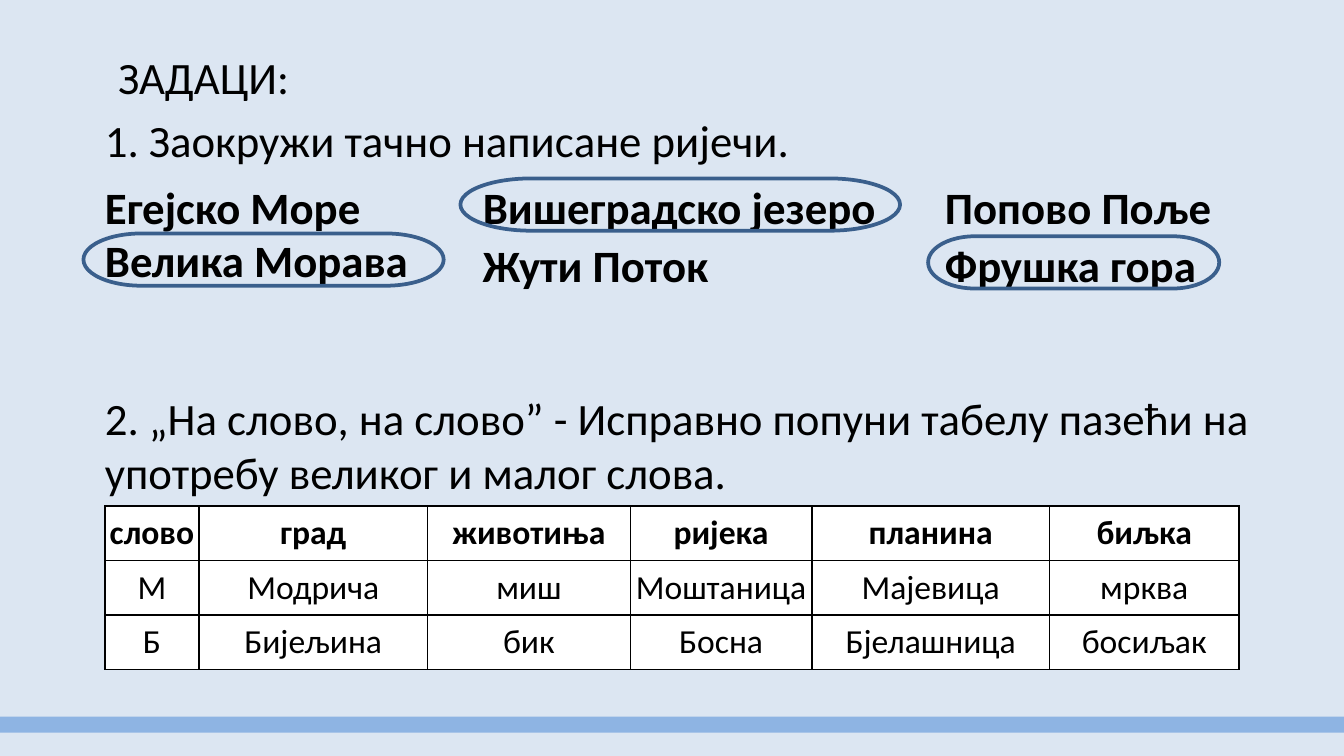
import dataclasses

import lxml.etree
import pptx
import pptx.dml.color
import pptx.enum.shapes
import pptx.enum.text
import pptx.oxml.ns
import pptx.util

Pt = pptx.util.Pt
RGB = pptx.dml.color.RGBColor.from_string
Anchor = pptx.enum.text.MSO_ANCHOR
Shape = pptx.enum.shapes.MSO_SHAPE


@dataclasses.dataclass(frozen=True)
class Theme:
    """Colours, font and type sizes of the slide."""

    background: str = "DCE6F2"
    stripe: str = "8EB4E3"
    ring: str = "3A5F8C"
    ink: str = "000000"
    cell: str = "FFFFFF"
    font: str = "Calibri"
    body: float = 24
    table: float = 18
    ring_width: float = 2
    border: float = 1


THEME = Theme()

WORD_COLUMNS = [
    (0, 173, 60.5, [("Егејско Море", 31), ("Велика Морава", None)]),
    (202.5, 218, 62.5, [("Вишеградско језеро", 31), ("Жути Поток", 31)]),
    (450, 173, 62.5, [("Попово Поље", 31), ("Фрушка гора", 31)]),
]
RINGS = [(-11.5, 31.5, 193), (190.5, 2, 235.5), (441, 33, 156)]
RING_HEIGHT = 28

COLUMN_WIDTHS = [50.4, 122.4, 108.7, 97.2, 127.4, 101.5]
WORD_GRID = [
    ["слово", "град", "животиња", "ријека", "планина", "биљка"],
    ["М", "Модрича", "миш", "Моштаница", "Мајевица", "мрква"],
    ["Б", "Бијељина", "бик", "Босна", "Бјелашница", "босиљак"],
]


def write(paragraph, words, size, bold=False):
    """Add one styled run to a paragraph."""
    run = paragraph.add_run()
    run.text = words
    run.font.name = THEME.font
    run.font.size = Pt(size)
    run.font.bold = bold
    run.font.color.rgb = RGB(THEME.ink)


def add_lines(slide, box, lines, bold=False):
    """Place lines of body text, each with its line spacing, in a box without insets."""
    frame = slide.shapes.add_textbox(*map(Pt, box)).text_frame
    frame.word_wrap = True
    frame.auto_size = pptx.enum.text.MSO_AUTO_SIZE.SHAPE_TO_FIT_TEXT
    frame.vertical_anchor = Anchor.MIDDLE
    frame.margin_left = frame.margin_right = frame.margin_top = frame.margin_bottom = 0
    for index, (words, spacing) in enumerate(lines):
        paragraph = frame.add_paragraph() if index else frame.paragraphs[0]
        if spacing:
            paragraph.line_spacing = Pt(spacing)
        write(paragraph, words, THEME.body, bold)


def add_heading(slide, box):
    """Place the unwrapped heading."""
    frame = slide.shapes.add_textbox(*map(Pt, box)).text_frame
    frame.word_wrap = False
    frame.auto_size = pptx.enum.text.MSO_AUTO_SIZE.SHAPE_TO_FIT_TEXT
    write(frame.paragraphs[0], "ЗАДАЦИ:", THEME.body)


def add_stripe(slide, box):
    """Place the coloured stripe near the foot."""
    stripe = slide.shapes.add_shape(Shape.RECTANGLE, *map(Pt, box))
    stripe.shadow.inherit = False
    stripe.fill.solid()
    stripe.fill.fore_color.rgb = RGB(THEME.stripe)
    stripe.line.fill.background()


def add_word_choice(slide, box):
    """Place the word columns and the rings round the right answers."""
    left, top = box[:2]
    for x, width, height, lines in WORD_COLUMNS:
        add_lines(slide, (left + x, top, width, height), lines, bold=True)
    for x, y, width in RINGS:
        ring = slide.shapes.add_shape(
            Shape.FLOWCHART_TERMINATOR, Pt(left + x), Pt(top + y), Pt(width), Pt(RING_HEIGHT)
        )
        ring.shadow.inherit = False
        ring.fill.background()
        ring.line.color.rgb = RGB(THEME.ring)
        ring.line.width = Pt(THEME.ring_width)


def style_cell(cell):
    """Give a cell thin borders, a plain fill and no margins."""
    qn = pptx.oxml.ns.qn
    properties = cell._tc.get_or_add_tcPr()
    for side in ("lnL", "lnR", "lnT", "lnB"):
        border = lxml.etree.SubElement(properties, qn(f"a:{side}"), w=str(Pt(THEME.border)))
        fill = lxml.etree.SubElement(border, qn("a:solidFill"))
        lxml.etree.SubElement(fill, qn("a:srgbClr"), val=THEME.ink)
    cell.fill.solid()
    cell.fill.fore_color.rgb = RGB(THEME.cell)
    cell.margin_left = cell.margin_right = cell.margin_top = cell.margin_bottom = 0
    cell.vertical_anchor = Anchor.MIDDLE


def add_word_table(slide, box):
    """Place the filled-in word game table."""
    table = slide.shapes.add_table(len(WORD_GRID), len(COLUMN_WIDTHS), *map(Pt, box)).table
    table.first_row = table.horz_banding = False
    for column, width in zip(table.columns, COLUMN_WIDTHS):
        column.width = Pt(width)
    for row_index, row in enumerate(WORD_GRID):
        table.rows[row_index].height = Pt(box[3] / len(WORD_GRID))
        for column_index, word in enumerate(row):
            cell = table.cell(row_index, column_index)
            style_cell(cell)
            paragraph = cell.text_frame.paragraphs[0]
            paragraph.alignment = pptx.enum.text.PP_ALIGN.CENTER
            write(paragraph, word, THEME.table, bold=row_index == 0)


def build_tasks_slide(deck):
    """Build the slide with the two tasks."""
    slide = deck.slides.add_slide(deck.slide_layouts[6])
    slide.background.fill.solid()
    slide.background.fill.fore_color.rgb = RGB(THEME.background)
    left = 56.2
    add_stripe(slide, (0, 384, 720, 8.5))
    add_heading(slide, (left, 23, 107, 36))
    add_lines(slide, (left, 60.5, 623.5, 29), [("1. Заокружи тачно написане ријечи.", None)])
    add_word_choice(slide, (left, 93.6, 623, 62.5))
    add_lines(slide, (left, 209, 623.5, 58.3), [
        ("2. „На слово, на слово” - Исправно попуни табелу пазећи на "
         "употребу великог и малог слова.", None),
    ])
    add_word_table(slide, (left, 271, sum(COLUMN_WIDTHS), 87.6))


def main():
    """Create and save the deck."""
    deck = pptx.Presentation()
    deck.slide_width, deck.slide_height = Pt(720), Pt(405)
    build_tasks_slide(deck)
    deck.save("out.pptx")


if __name__ == "__main__":
    main()
